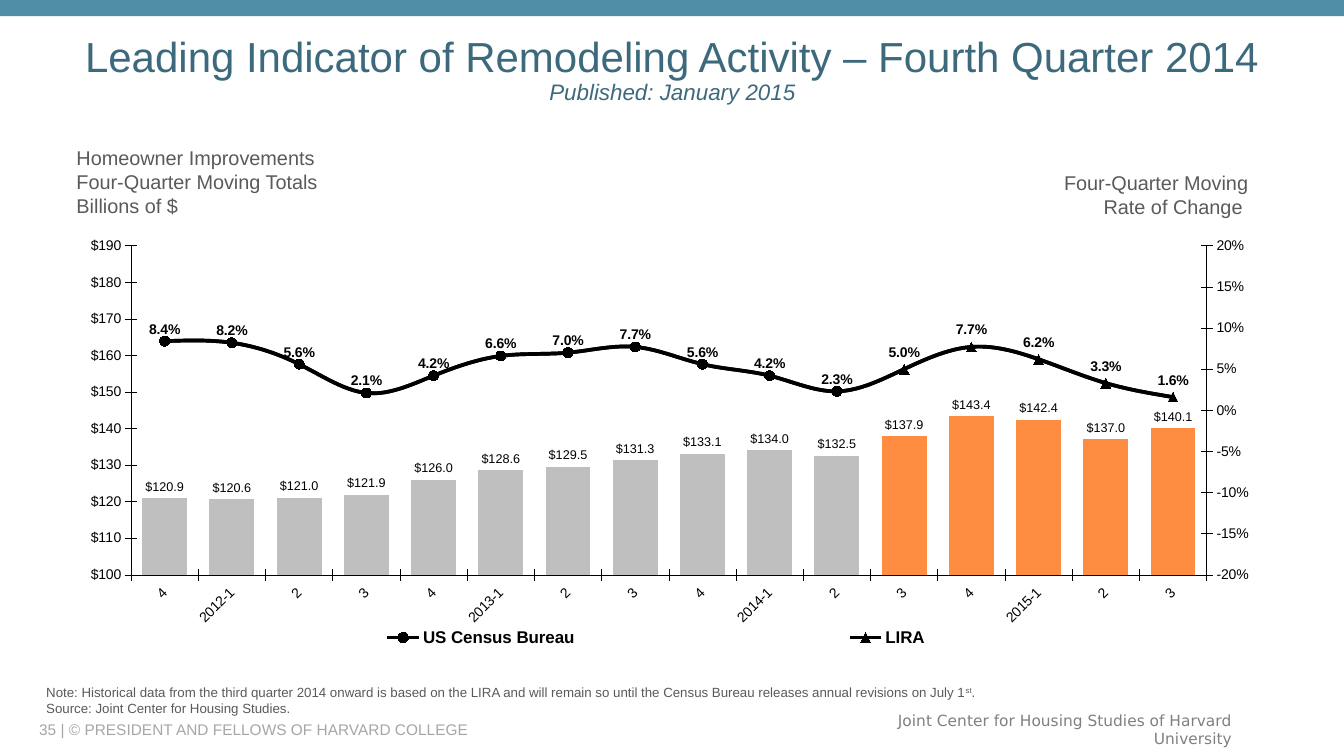
from copy import deepcopy
from lxml import etree
from pptx import Presentation
from pptx.chart.axis import ValueAxis
from pptx.chart.data import CategoryChartData
from pptx.dml.color import RGBColor
from pptx.enum.chart import (XL_CHART_TYPE, XL_LABEL_POSITION, XL_LEGEND_POSITION,
                             XL_MARKER_STYLE, XL_TICK_LABEL_POSITION, XL_TICK_MARK)
from pptx.enum.shapes import MSO_SHAPE
from pptx.enum.text import MSO_ANCHOR, PP_ALIGN
from pptx.oxml import parse_xml
from pptx.util import Inches, Pt

LEFT, MID, RIGHT = PP_ALIGN.LEFT, PP_ALIGN.CENTER, PP_ALIGN.RIGHT
TOP, CORE = MSO_ANCHOR.TOP, MSO_ANCHOR.MIDDLE
CROSS, LOW = XL_TICK_MARK.CROSS, XL_TICK_LABEL_POSITION.LOW
ROUND, WEDGE, BARE = XL_MARKER_STYLE.CIRCLE, XL_MARKER_STYLE.TRIANGLE, XL_MARKER_STYLE.NONE
OUTER, ABOVE = XL_LABEL_POSITION.OUTSIDE_END, XL_LABEL_POSITION.ABOVE
NS = "http://schemas.openxmlformats.org/drawingml/2006/chart"
BLACK, GRAY, TEAL = "000000", "5A5A5A", "3C6A7C"

deck = Presentation()
deck.slide_width, deck.slide_height = Inches(13.33), Inches(7.5)
slide = deck.slides.add_slide(deck.slide_layouts[6])
col, row = deck.slide_width / 100, deck.slide_height / 100


def style(font, size, hue=BLACK, face="Arial", bold=False, italic=False):
    font.size, font.name, font.bold, font.italic = Pt(size), face, bold, italic
    font.color.rgb = RGBColor.from_string(hue)


def write(x, y, w, h, lines, size, hue, face="Arial", align=LEFT, anchor=TOP, lead=1.0):
    frame = slide.shapes.add_textbox(*map(int, (x * col, y * row, w * col, h * row))).text_frame
    frame.word_wrap, frame.vertical_anchor = True, anchor
    for i, line in enumerate(lines):
        para = frame.add_paragraph() if i else frame.paragraphs[0]
        para.alignment, para.line_spacing = align, lead
        for text, look in [(line, {})] if isinstance(line, str) else line:
            if text == "\n":
                para.add_line_break()
                continue
            run = para.add_run()
            run.text = text
            style(run.font, look.get("size", size), hue, face, italic=look.get("italic", False))
            if "base" in look:
                run.font._element.set("baseline", look["base"])


write(2.18, 95.07, 59.4, 2.67, ["35 | © PRESIDENT AND FELLOWS OF HARVARD COLLEGE"], 11, "A6A6A6", anchor=CORE)
write(63.15, 94.53, 29.25, 3.87, ["Joint Center for Housing Studies of Harvard University"], 11, "808080",
      face="DejaVu Sans", align=RIGHT, anchor=CORE)

band = slide.shapes.add_shape(MSO_SHAPE.RECTANGLE, 0, 0, deck.slide_width, int(2.13 * row))
band.shadow.inherit = False
band.fill.solid()
band.fill.fore_color.rgb = RGBColor.from_string("508DA6")
band.line.fill.background()

write(4.2, 4.4, 91.65, 10, [[("Leading Indicator of Remodeling Activity – Fourth Quarter 2014", {}), ("\n", {}),
                             ("Published: January 2015", {"size": 16, "italic": True})]],
      30, TEAL, align=MID, anchor=CORE, lead=0.9)
write(4.95, 18.67, 28.73, 10.93,
      ["Homeowner Improvements", "Four-Quarter Moving Totals", "Billions of $"], 14.2, GRAY)
write(63.15, 21.87, 30.45, 7.73, ["Four-Quarter Moving", "Rate of Change "], 14.2, GRAY, align=RIGHT)

spend = [120.9, 120.6, 121, 121.9, 126, 128.6, 129.5, 131.3,
         133.1, 134, 132.5, 137.9, 143.4, 142.4, 137, 140.1]
rates = [0.084, 0.082, 0.056, 0.021, 0.042, 0.066, 0.07, 0.077,
         0.056, 0.042, 0.023, 0.05, 0.077, 0.062, 0.033, 0.016]
split, count = 11, len(spend)
data = CategoryChartData()
data.categories = ["4"] + [f"{year}-1" if q == 1 else str(q)
                           for year in range(2012, 2016) for q in range(1, 5)][:count - 1]
data.add_series("Series 1", spend)
data.add_series("US Census Bureau", rates)
data.add_series("LIRA", rates)
chart = slide.shapes.add_chart(XL_CHART_TYPE.COLUMN_CLUSTERED, *map(
    int, (4.2 * col, 28.93 * row, 91.05 * col, 57.73 * row)), data).chart
chart.has_title = False
style(chart.font, 13.2)

cat, left = chart.category_axis, chart.value_axis
for axis in (cat, left):
    axis.has_major_gridlines = False
    axis.major_tick_mark = CROSS
    axis.format.line.width = Pt(0.33)
    axis.format.line.color.rgb = RGBColor.from_string(BLACK)
    style(axis.tick_labels.font, 10)
cat.tick_label_position = LOW
cat._element.find(f".//{{{NS}}}txPr")[0].set("rot", "-2700000")

area = chart._chartSpace.chart.plotArea
bars = area.find(f"{{{NS}}}barChart")
lines = parse_xml(f'<c:lineChart xmlns:c="{NS}"><c:grouping val="standard"/><c:varyColors val="0"/>'
                  '<c:marker val="1"/><c:axId val="501"/><c:axId val="502"/></c:lineChart>')
bars.addnext(lines)
for i, ser in enumerate(bars.findall(f"{{{NS}}}ser")[1:]):
    for flag in ser.findall(f"{{{NS}}}invertIfNegative"):
        ser.remove(flag)
    lines.insert(2 + i, ser)

right, spare = deepcopy(left._element), deepcopy(cat._element)
left._element.addnext(right)
right.addnext(spare)
for axis, own, other in ((right, "502", "501"), (spare, "501", "502")):
    axis.find(f"{{{NS}}}axId").set("val", own)
    axis.find(f"{{{NS}}}crossAx").set("val", other)
right.find(f"{{{NS}}}crosses").set("val", "max")
right.find(f"{{{NS}}}axPos").set("val", "r")
ValueAxis(spare).visible = False

for axis, low, high, step, form in ((left, 100, 190, 10, r"\$#,##0"),
                                    (ValueAxis(right), -0.2, 0.2, 0.05, "0%")):
    axis.minimum_scale, axis.maximum_scale, axis.major_unit = low, high, step
    axis.tick_labels.number_format = form
    axis.tick_labels.number_format_is_linked = False

plot, trend = chart.plots
plot.gap_width, plot.vary_by_categories = 50, False
total = plot.series[0]
census, lira = trend.series
total.format.fill.solid()
total.format.fill.fore_color.rgb = RGBColor.from_string("BFBFBF")
for i in range(split, count):
    fill = total.points[i].format.fill
    fill.solid()
    fill.fore_color.rgb = RGBColor.from_string("FF8D41")

for ser, mark, hide in ((census, ROUND, range(split, count)), (lira, WEDGE, range(split))):
    ser.smooth = True
    ser.marker.style, ser.marker.size = mark, 7
    ser.marker.format.fill.solid()
    ser.marker.format.fill.fore_color.rgb = RGBColor.from_string(BLACK)
    ser.marker.format.line.color.rgb = RGBColor.from_string(BLACK)
    for part in [ser] + [ser.points[i] for i in hide]:
        part.format.line.width = Pt(2.64)
        part.format.line.color.rgb = RGBColor.from_string(BLACK)
    for i in hide:
        ser.points[i].marker.style = BARE

for ser, place, form, size, bold in ((total, OUTER, r"\$#,##0.0", 9, False),
                                     (lira, ABOVE, "0.0%", 10, True)):
    tags = ser.data_labels
    tags.show_value, tags.position = True, place
    tags.number_format, tags.number_format_is_linked = form, False
    style(tags.font, size, bold=bold)

chart.has_legend = True
key = chart.legend
key.position, key.include_in_layout = XL_LEGEND_POSITION.BOTTOM, False
style(key.font, 12.1, bold=True)
key._element.find(f"{{{NS}}}legendPos").addnext(parse_xml(
    f'<c:legendEntry xmlns:c="{NS}"><c:idx val="0"/><c:delete val="1"/></c:legendEntry>'))

for host, spot, inner, share in ((area, 0, True, (0.061, 0.062, 0.879, 0.754)),
                                 (key._element, 2, False, (0.05, 0.92, 0.88, 0.08))):
    for old in host.findall(f"{{{NS}}}layout"):
        host.remove(old)
    layout = etree.Element(f"{{{NS}}}layout")
    manual = etree.SubElement(layout, f"{{{NS}}}manualLayout")
    rules = [("layoutTarget", "inner")] if inner else []
    rules += [("xMode", "edge"), ("yMode", "edge"), *zip("xywh", map(str, share))]
    for name, value in rules:
        etree.SubElement(manual, f"{{{NS}}}{name}").set("val", value)
    host.insert(spot, layout)

write(2.7, 89.87, 92.4, 5.6, [
    [("Note: Historical data from the third quarter 2014 onward is based on the LIRA and will remain so "
      "until the Census Bureau releases annual revisions on July 1", {}), ("st", {"base": "30000"}), (".", {})],
    "Source: Joint Center for Housing Studies."], 9.5, GRAY)

deck.save("out.pptx")
